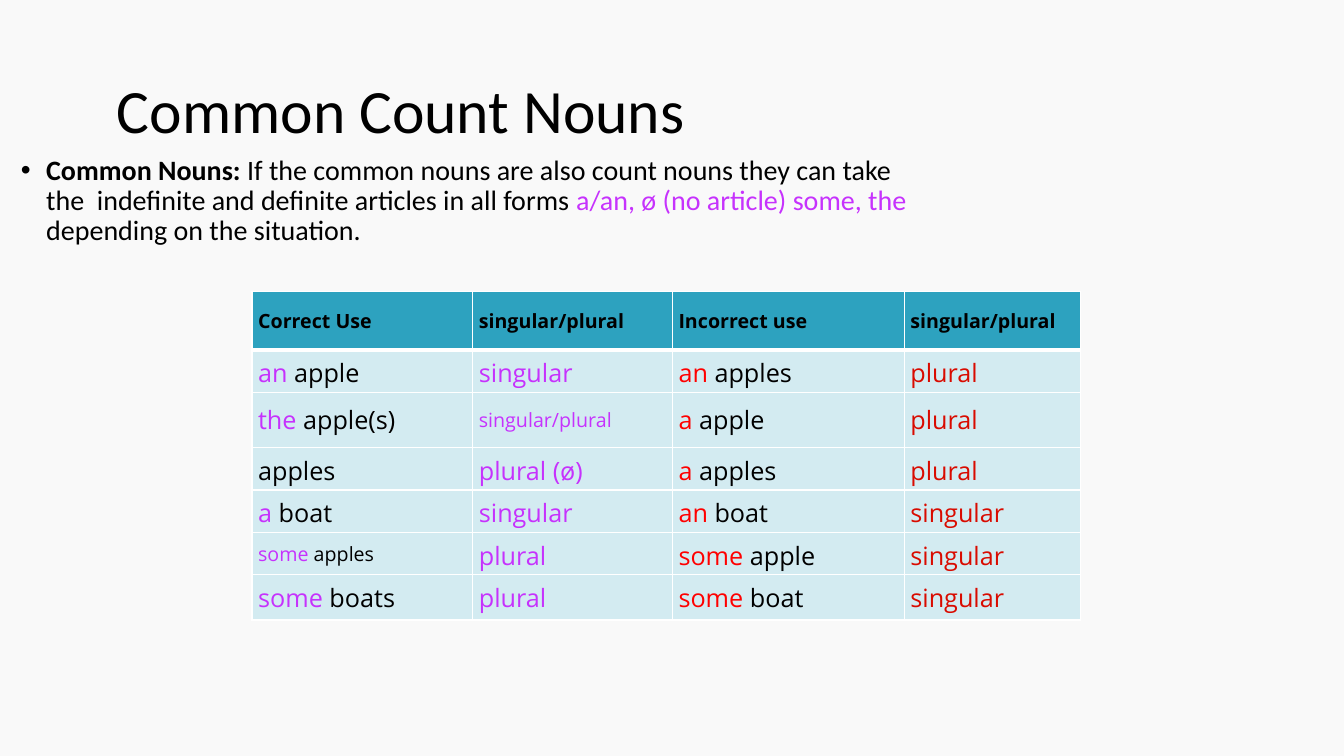
from lxml import etree
from pptx import Presentation
from pptx.dml.color import RGBColor
from pptx.enum import text as t
from pptx.oxml.ns import qn
from pptx.util import Inches, Pt

BACK = RGBColor(0xF9, 0xF9, 0xF9)
BLACK = RGBColor(0, 0, 0)
PURPLE = RGBColor(0xC6, 0x32, 0xFD)
RED = RGBColor(0xFF, 0, 0)
BRICK = RGBColor(0xD9, 0x0B, 0)
TEAL = RGBColor(0x2D, 0xA2, 0xBF)
PALE = RGBColor(0xD3, 0xEB, 0xF1)
WHITE = RGBColor(0xFF, 0xFF, 0xFF)


def add_run(para, words, face, size, color, bold=False):
    run = para.add_run()
    run.text = words
    font = run.font
    font.name, font.size, font.bold = face, Pt(size), bold
    font.color.rgb = color


def add_edge(cell, side, width):
    line = etree.SubElement(cell._tc.get_or_add_tcPr(), qn("a:" + side), w=str(Pt(width)))
    fill = etree.SubElement(line, qn("a:solidFill"))
    etree.SubElement(fill, qn("a:srgbClr"), val=str(WHITE))


deck = Presentation()
deck.slide_width, deck.slide_height = Inches(13.33), Inches(7.5)
slide = deck.slides.add_slide(deck.slide_layouts[5])
slide.background.fill.solid()
slide.background.fill.fore_color.rgb = BACK

# Title
title = slide.shapes.title
title.left, title.top = Inches(0.92), Inches(0.4)
title.width, title.height = Inches(11.5), Inches(1.45)
frame = title.text_frame
frame.vertical_anchor = t.MSO_ANCHOR.MIDDLE
frame.margin_left = Inches(0.24)
para = frame.paragraphs[0]
para.alignment = t.PP_ALIGN.LEFT
para.line_spacing = 0.9
add_run(para, "Common Count Nouns", "Calibri", 44, BLACK)

# Rule with a bullet
body = slide.shapes.add_textbox(0, Inches(1.5), Inches(9.1), Inches(5.17))
frame = body.text_frame
frame.word_wrap = True
para = frame.paragraphs[0]
para.line_spacing = 0.9
props = para._p.get_or_add_pPr()
props.set("marL", str(Inches(0.36)))
props.set("indent", str(Inches(-0.25)))
etree.SubElement(props, qn("a:buFont"), typeface="Arial")
etree.SubElement(props, qn("a:buChar"), char="•")
for words, color, bold in [
    ("Common Nouns:", BLACK, True),
    (" If the common nouns are also count nouns they can take the  indefinite "
     "and definite articles in all forms ", BLACK, False),
    ("a/an, ø (no article) some, the ", PURPLE, False),
    ("depending on the situation.", BLACK, False),
]:
    add_run(para, words, "Calibri", 20, color, bold)

# Table: the part before the bar takes the column's colour, the rest is black
heads = ["|Correct Use", "|singular/plural", "|Incorrect use", "|singular/plural"]
rows = [
    heads,
    ["an| apple", "singular", "an |apples", "plural"],
    ["the| apple(s)", "singular/plural", "a |apple", "plural"],
    ["|apples", "plural (ø)", "a |apples", "plural"],
    ["a| boat", "singular", "an |boat", "singular"],
    ["some| apples", "plural", "some |apple", "singular"],
    ["some |boats", "plural", "some |boat", "singular"],
]
tints = [PURPLE, PURPLE, RED, BRICK]
small = {(2, 1), (5, 0)}
grid = slide.shapes.add_table(
    len(rows), len(heads), Inches(2.5), Inches(2.89), Inches(8.22), Inches(3.22)).table
grid.horz_banding = False
for col, width in zip(grid.columns, [2.19, 1.98, 2.3, 1.75]):
    col.width = Inches(width)
for row, height in zip(grid.rows, [0.58, 0.41, 0.55, 0.41, 0.41, 0.41, 0.45]):
    row.height = Inches(height)

for r, row in enumerate(rows):
    for c, entry in enumerate(row):
        cell = grid.cell(r, c)
        cell.vertical_anchor = t.MSO_ANCHOR.MIDDLE
        cell.margin_left = cell.margin_right = Inches(0.06)
        cell.margin_top = cell.margin_bottom = Inches(0.06)
        for side in ("lnL", "lnR", "lnT", "lnB"):
            thick = (r, side) in {(0, "lnB"), (1, "lnT")}
            add_edge(cell, side, 3 if thick else 1)
        cell.fill.solid()
        cell.fill.fore_color.rgb = PALE if r else TEAL
        size = 14 if r == 0 or (r, c) in small else 18
        lead, _, rest = entry.partition("|")
        for words, color in [(lead, tints[c]), (rest, BLACK)]:
            if words:
                add_run(cell.text_frame.paragraphs[0], words, "Open Sans", size, color, r == 0)

deck.save("out.pptx")
